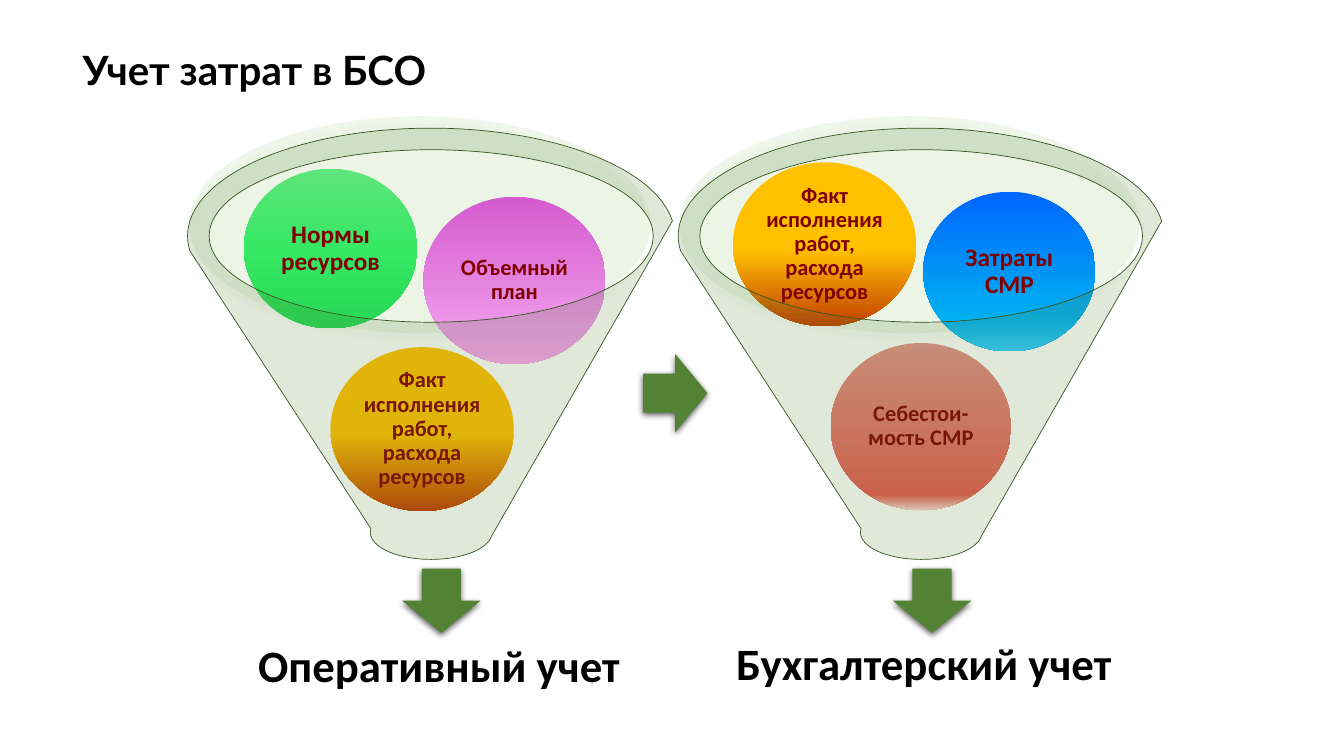
from dataclasses import dataclass
from lxml.etree import SubElement
from pptx import Presentation
from pptx.dml.color import RGBColor
from pptx.enum.shapes import MSO_SHAPE
from pptx.enum.text import MSO_ANCHOR, PP_ALIGN
from pptx.oxml.ns import qn
from pptx.util import Pt


@dataclass(frozen=True)
class Theme:
    ink: str = "000000"
    text: str = "800000"
    leaf: str = "548235"
    edge: str = "385723"
    rim: str = "C5E0B4"
    glow: str = "E2F0D9"
    green: tuple = ((0, "5EE57B"), (50, "36E864"), (100, "27D755"))
    pink: tuple = ((0, "D45ACE"), (80, "EE9AEA"), (100, "FEA4ED"))
    gold: tuple = ((0, "FFC000"), (53, "FFC000"), (100, "C13E03"))
    blue: tuple = ((0, "0066FF"), (80, "00B0F0"), (100, "33CCFF"))
    red: tuple = ((0, "E19189"), (91, "E55C51"), (100, "F9D6D3"))
    font: str = "Calibri"
    head: str = "Lato"
    title: float = 28.8
    label: int = 32
    large: int = 18
    small: int = 16


THEME = Theme()
FACT = "Факт исполнения работ, расхода ресурсов"


def add_color(node, color, alpha=100):
    rgb = SubElement(node, qn("a:srgbClr"), val=color)
    if alpha < 100:
        SubElement(rgb, qn("a:alpha"), val=str(alpha * 1000))


def add_form(slide, kind, box):
    shape = slide.shapes.add_shape(kind, *map(Pt, box))
    shape.line.fill.background()
    shape.shadow.inherit = False
    return shape


def fill_flat(shape, color, alpha=100):
    shape.fill.solid()
    shape.fill.fore_color.rgb = RGBColor.from_string(color)
    if alpha < 100:
        rgb = shape.fill._xPr.find(".//" + qn("a:srgbClr"))
        SubElement(rgb, qn("a:alpha"), val=str(alpha * 1000))


def fill_fade(shape, stops):
    shape.fill.gradient()
    grad = shape._element.spPr.find(qn("a:gradFill"))
    for child in list(grad):
        grad.remove(child)
    group = SubElement(grad, qn("a:gsLst"))
    for place, color in stops:
        add_color(SubElement(group, qn("a:gs"), pos=str(place * 1000)), color)
    SubElement(grad, qn("a:lin"), ang="5400000", scaled="0")


def add_shade(shape, color, alpha, blur, dist):
    effects = shape._element.spPr.find(qn("a:effectLst"))
    shade = SubElement(effects, qn("a:outerShdw"), blurRad=str(Pt(blur)),
                       dist=str(Pt(dist)), dir="5400000", rotWithShape="0")
    add_color(shade, color, alpha)


def add_words(para, words, size, color, font=THEME.font):
    run = para.add_run()
    run.text = words
    run.font.name = font
    run.font.size = Pt(size)
    run.font.bold = True
    run.font.color.rgb = RGBColor.from_string(color)


def add_text(slide, box, words, size, font=THEME.font):
    frame = slide.shapes.add_textbox(*map(Pt, box)).text_frame
    frame.word_wrap = True
    para = frame.paragraphs[0]
    add_words(para, words, size, THEME.ink, font)
    return para


def add_title(slide, box, words):
    add_text(slide, box, words, THEME.title, THEME.head).line_spacing = 0.9


def add_label(slide, box, words):
    para = add_text(slide, box, words, THEME.label)
    para.alignment = PP_ALIGN.CENTER
    para.space_after = Pt(12)


def add_arrow(slide, left, top, turn=0):
    arrow = add_form(slide, MSO_SHAPE.DOWN_ARROW, (left, top, 56, 46))
    arrow.rotation = turn
    fill_flat(arrow, THEME.leaf)
    add_shade(arrow, THEME.ink, 63, 4.5, 1.5)


def add_ball(slide, box, words, size, stops):
    ball = add_form(slide, MSO_SHAPE.OVAL, box)
    fill_fade(ball, stops)
    frame = ball.text_frame
    frame.word_wrap = True
    frame.vertical_anchor = MSO_ANCHOR.MIDDLE
    frame.margin_left = frame.margin_right = 0
    frame.margin_top = frame.margin_bottom = 0
    para = frame.paragraphs[0]
    para.alignment = PP_ALIGN.CENTER
    para.line_spacing = 0.9
    add_words(para, words, size, THEME.text)


def add_funnel(slide, box, balls):
    left, top, width, height = box
    rim = add_form(slide, MSO_SHAPE.OVAL, (left + 0.7, top, width - 18, 155))
    fill_flat(rim, THEME.rim, 24)
    add_shade(rim, THEME.glow, 92, 4, 4)
    for (x, y, wide, high), words, size, stops in balls:
        add_ball(slide, (left + x, top + y, wide, high), words, size, stops)
    add_arrow(slide, left + 153.3, top + height + 6.5)
    cone = add_form(slide, MSO_SHAPE.FUNNEL,
                    (left, top + 8.6, width, height - 8.6))
    fill_flat(cone, THEME.leaf, 18)
    cone.line.color.rgb = RGBColor.from_string(THEME.edge)
    cone.line.width = Pt(0.5)


def main():
    deck = Presentation()
    deck.slide_width, deck.slide_height = Pt(960), Pt(540)
    slide = deck.slides.add_slide(deck.slide_layouts[6])
    add_funnel(slide, (134, 83, 348, 316.6), (
        ((168.5, 57.5, 130, 119.5), "Объемный план", THEME.small, THEME.pink),
        ((102, 165, 131, 117), FACT, THEME.small, THEME.gold),
        ((40.2, 37.5, 124, 114), "Нормы ресурсов", THEME.large, THEME.green),
    ))
    add_funnel(slide, (484.5, 83, 347, 316.6), (
        ((108.8, 162, 129, 119.5), "Себестои-мость СМР", THEME.small,
         THEME.red),
        ((39, 33, 131, 117), FACT, THEME.small, THEME.gold),
        ((175, 54, 123, 114), "Затраты СМР", THEME.large, THEME.blue),
    ))
    add_label(slide, (120.2, 452.2, 387, 46), "Оперативный учет")
    add_label(slide, (466.5, 450.7, 387, 46), "Бухгалтерский учет")
    add_arrow(slide, 454.3, 257.8, 270)
    add_title(slide, (52, 33, 828, 45), "Учет затрат в БСО")
    deck.save("out.pptx")


if __name__ == "__main__":
    main()
